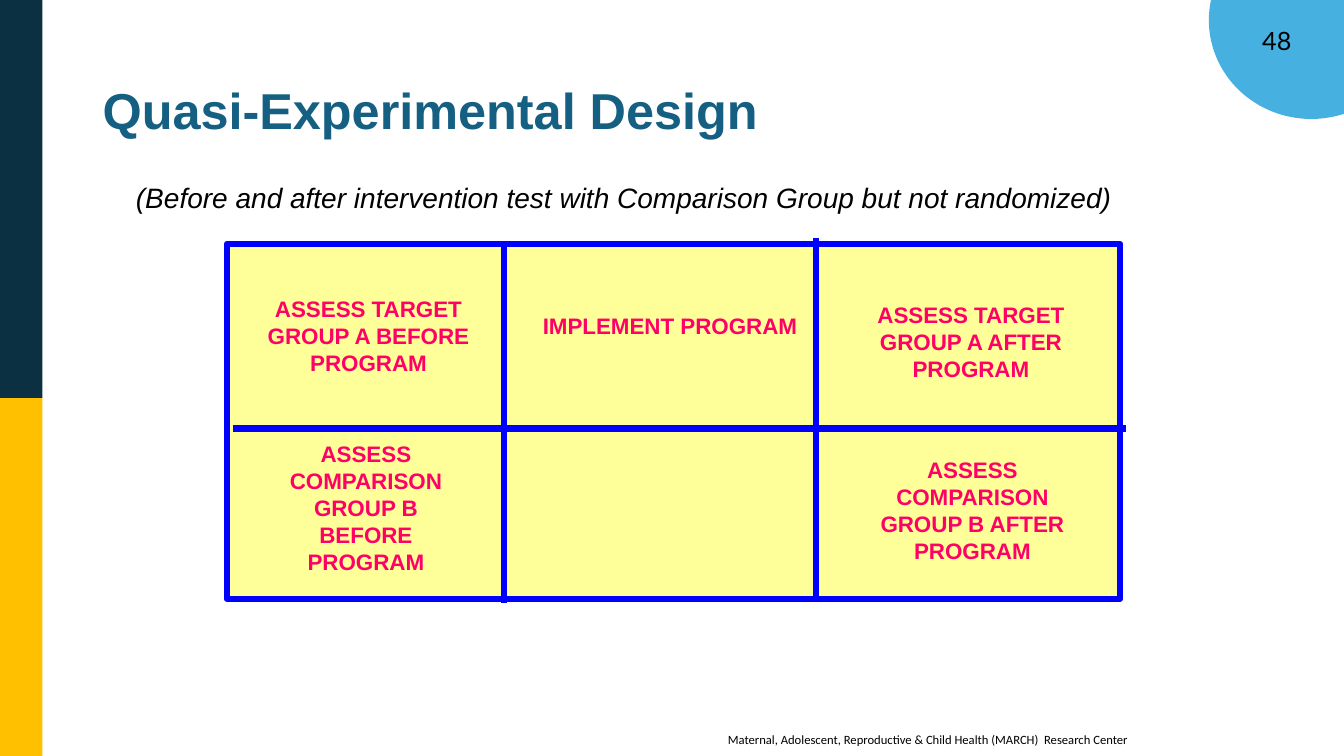
"""Build the quasi-experimental design slide."""
from dataclasses import dataclass

from lxml.etree import SubElement
from pptx import Presentation
from pptx.dml.color import RGBColor
from pptx.enum.shapes import MSO_CONNECTOR as Connector, MSO_SHAPE as Shape
from pptx.enum.text import MSO_ANCHOR as Anchor, PP_ALIGN as Align
from pptx.oxml.ns import qn
from pptx.slide import Slide
from pptx.util import Emu, Pt

EMU_PER_PX = 9144
GRID_WIDTH = 4.5
COLORS = {
    "sky": "46B1E1",
    "navy": "0B3041",
    "gold": "FFC000",
    "title": "156082",
    "cell": "FFFF99",
    "grid": "0000FF",
    "label": "FF0066",
    "ink": "000000",
}


@dataclass(frozen=True)
class Block:
    kind: Shape
    left: int
    top: int
    width: int
    height: int
    fill: str
    outline: str = ""
    weight: float = 0


@dataclass(frozen=True)
class Rule:
    x1: int
    y1: int
    x2: int
    y2: int


@dataclass(frozen=True)
class Label:
    lines: tuple[str, ...]
    left: int
    top: int
    width: int
    height: int
    size: int = 16
    color: str = "label"
    font: str = "Arial"
    bold: bool = True
    italic: bool = False
    align: Align = Align.CENTER
    anchor: Anchor = Anchor.TOP
    spacing: float = 1.0


BLOCKS = (
    Block(Shape.OVAL, 1200, -77, 201, 194, "sky", "sky", 1.5),
    Block(Shape.RECTANGLE, 0, 0, 42, 395, "navy"),
    Block(Shape.RECTANGLE, 0, 395, 42, 355, "gold"),
    Block(Shape.RECTANGLE, 225, 242, 886, 352, "cell", "grid", GRID_WIDTH),
)
RULES = (
    Rule(231, 425, 1117, 425),
    Rule(500, 244, 500, 598),
    Rule(809, 236, 809, 594),
)
LABELS = (
    Label(("48",), 1242, 20, 50, 40, 18, "ink", "Lato", False, align=Align.LEFT),
    Label(("Maternal, Adolescent, Reproductive & Child Health (MARCH)  Research Center",),
          712, 721, 449, 25, 9, "ink", "Calibri", False, align=Align.LEFT),
    Label(("Quasi-Experimental Design",), 92, 40, 1150, 145, 36, "title",
          align=Align.LEFT, anchor=Anchor.MIDDLE, spacing=0.9),
    Label(("(Before and after intervention test with Comparison Group but not randomized)",),
          125, 178, 1020, 40, 20, "ink", bold=False, italic=True,
          align=Align.LEFT, spacing=0.9),
    Label(("ASSESS TARGET GROUP A BEFORE PROGRAM",), 238, 288, 255, 89),
    Label(("IMPLEMENT PROGRAM",), 522, 305, 285, 36),
    Label(("ASSESS TARGET GROUP A AFTER PROGRAM",), 824, 294, 278, 89),
    Label(("ASSESS COMPARISON GROUP B BEFORE PROGRAM",), 258, 432, 210, 143),
    Label(("ASSESS COMPARISON GROUP B AFTER", "PROGRAM"), 848, 448, 233, 116),
)


def px(value: int) -> Emu:
    """Turn px into EMU."""
    return Emu(value * EMU_PER_PX)


def color(name: str) -> RGBColor:
    """Look up a named colour."""
    return RGBColor.from_string(COLORS[name])


def draw_block(page: Slide, block: Block) -> None:
    """Draw a filled preset shape."""
    shape = page.shapes.add_shape(
        block.kind, px(block.left), px(block.top), px(block.width), px(block.height))
    shape.shadow.inherit = False
    shape.fill.solid()
    shape.fill.fore_color.rgb = color(block.fill)
    if block.outline:
        shape.line.color.rgb = color(block.outline)
        shape.line.width = Pt(block.weight)
    else:
        shape.line.fill.background()


def draw_rule(page: Slide, rule: Rule) -> None:
    """Draw a grid line."""
    line = page.shapes.add_connector(
        Connector.STRAIGHT, px(rule.x1), px(rule.y1), px(rule.x2), px(rule.y2))
    line.line.color.rgb = color("grid")
    line.line.width = Pt(GRID_WIDTH)
    SubElement(line.element.spPr, qn("a:effectLst"))


def draw_label(page: Slide, label: Label) -> None:
    """Draw a text box with one paragraph per line."""
    box = page.shapes.add_textbox(
        px(label.left), px(label.top), px(label.width), px(label.height))
    frame = box.text_frame
    frame.word_wrap = True
    frame.vertical_anchor = label.anchor
    frame.text = "\n".join(label.lines)
    for para in frame.paragraphs:
        para.alignment = label.align
        para.line_spacing = label.spacing
        para.font.name = label.font
        para.font.size = Pt(label.size)
        para.font.bold = label.bold
        para.font.italic = label.italic
        para.font.color.rgb = color(label.color)


def main() -> None:
    """Build and save the deck."""
    deck = Presentation()
    deck.slide_width, deck.slide_height = px(1333), px(750)
    page = deck.slides.add_slide(deck.slide_layouts[6])
    for block in BLOCKS:
        draw_block(page, block)
    for rule in RULES:
        draw_rule(page, rule)
    for label in LABELS:
        draw_label(page, label)
    deck.save("out.pptx")


if __name__ == "__main__":
    main()
